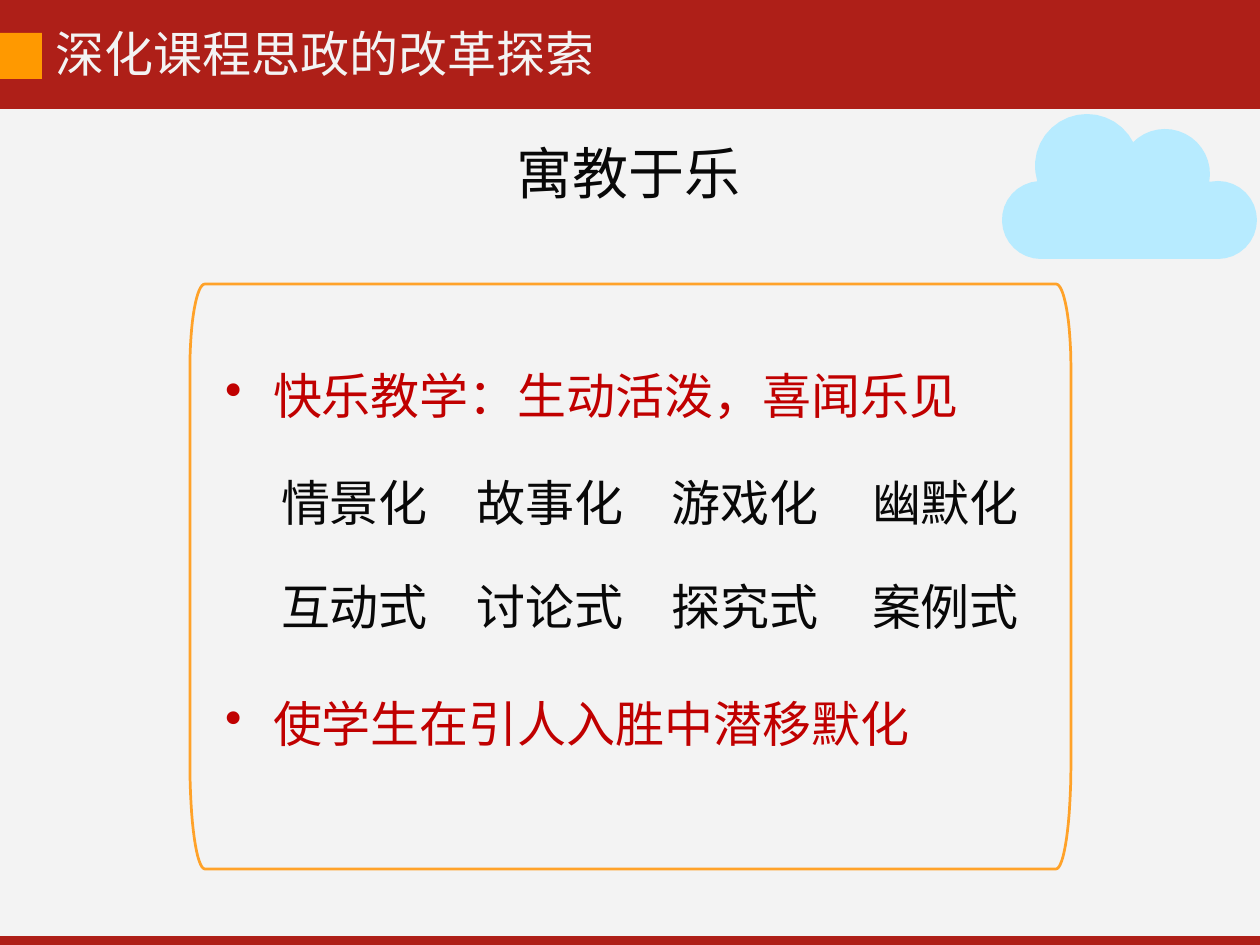
from math import cos, radians, sin

from lxml.etree import SubElement
from pptx import Presentation
from pptx.dml.color import RGBColor
from pptx.enum.shapes import MSO_SHAPE as Shape
from pptx.enum.text import MSO_ANCHOR as Anchor, MSO_AUTO_SIZE as AutoSize, PP_ALIGN as Align
from pptx.oxml.ns import qn
from pptx.util import Pt

FONT = "Noto Sans CJK SC"
RED, ORANGE, FRAME_ORANGE, SKY = "AE1F18", "FF9900", "FFA229", "B7EBFF"
PAPER, INK, ACCENT = "F3F3F3", "080808", "C00000"
NO_GRID_STYLE = "{2D5ABB26-0587-4C30-8999-92F81FD0307C}"


def px(length):
    return round(length * 914400 / 126)


def paint(fill, color):
    fill.solid()
    fill.fore_color.rgb = RGBColor.from_string(color)


def write_text(frame, text, size=28, color=INK, align=Align.LEFT, before=1,
               line=None, indent=0, bullet=None):
    paragraph = frame.paragraphs[0]
    paragraph.alignment = align
    paragraph.space_before = Pt(before)
    if line:
        paragraph.line_spacing = Pt(line)
    properties = paragraph._p.get_or_add_pPr()
    properties.set("marL", str(px(indent)))
    properties.set("indent", str(px(-48 if bullet else 0)))
    if bullet:
        SubElement(properties, qn("a:buChar")).set("char", bullet)
    run = paragraph.add_run()
    run.text = text
    run.font.size = Pt(size)
    run.font.name = FONT
    paint(run.font.fill, color)
    SubElement(run._r.get_or_add_rPr(), qn("a:ea")).set("typeface", FONT)


def fit_frame(frame):
    frame.word_wrap = True
    frame.auto_size = AutoSize.SHAPE_TO_FIT_TEXT
    frame.vertical_anchor = Anchor.TOP
    frame.margin_left = frame.margin_right = frame.margin_bottom = 0
    frame.margin_top = px(1)


def add_text(slide, box, text, **style):
    frame = slide.shapes.add_textbox(*map(px, box)).text_frame
    fit_frame(frame)
    write_text(frame, text, **style)


def set_title(slide, box, text, **style):
    title = slide.shapes.title
    title.left, title.top, title.width, title.height = map(px, box)
    fit_frame(title.text_frame)
    write_text(title.text_frame, text, **style)


def add_block(slide, box, color):
    block = slide.shapes.add_shape(Shape.RECTANGLE, *map(px, box))
    block.shadow.inherit = False
    paint(block.fill, color)
    block.line.fill.background()


def arc(center_x, center_y, radius_x, radius_y, start, end, steps=16):
    """Points along an ellipse, in degrees clockwise from the right."""
    angles = [radians(start + (end - start) * i / steps) for i in range(steps + 1)]
    return [(px(center_x + radius_x * cos(a)), px(center_y + radius_y * sin(a)))
            for a in angles]


def add_outline(slide, points):
    builder = slide.shapes.build_freeform(*points[0])
    builder.add_line_segments(points[1:], close=True)
    outline = builder.convert_to_shape()
    outline.shadow.inherit = False
    return outline


def add_frame(slide, left, top, right, bottom):
    side, upper, lower = 15, 84, 105
    points = (arc(left + side, top + upper, side, upper, 180, 270)
              + arc(right - side, top + upper, side, upper, 270, 360)
              + arc(right - side, bottom - lower, side, lower, 0, 90)
              + arc(left + side, bottom - lower, side, lower, 90, 180))
    frame = add_outline(slide, points)
    frame.fill.background()
    paint(frame.line.fill, FRAME_ORANGE)
    frame.line.width = Pt(1.56)


def add_cloud(slide):
    # Left end, large puff, small puff, right end
    puffs = [(1041, 220, 39, 90, 266), (1087, 166, 52, 163, 334),
             (1165, 174, 45, 224, 370), (1218, 220, 39, 270, 450)]
    points = [point for x, y, radius, start, end in puffs
              for point in arc(x, y, radius, radius, start, end)]
    cloud = add_outline(slide, points)
    paint(cloud.fill, SKY)
    cloud.line.fill.background()


def add_methods(slide, box, rows, widths):
    table = slide.shapes.add_table(len(rows), len(widths), *map(px, box)).table
    table.first_row = table.horz_banding = False
    table._tbl.tblPr.find(qn("a:tableStyleId")).text = NO_GRID_STYLE
    for column, width in zip(table.columns, widths):
        column.width = px(width)
    row_styles = [(0, dict(line=29.6, before=0)), (23, dict(line=30.9, before=13.2))]
    column_styles = [dict(indent=4), dict(indent=24), dict(indent=24),
                     dict(align=Align.RIGHT)]
    for i, (words, (margin_top, row_style)) in enumerate(zip(rows, row_styles)):
        for j, (word, column_style) in enumerate(zip(words, column_styles)):
            cell = table.cell(i, j)
            cell.margin_left = cell.margin_right = cell.margin_bottom = 0
            cell.margin_top = px(margin_top)
            paint(cell.fill, PAPER)
            write_text(cell.text_frame, word, **row_style, **column_style)


def main():
    presentation = Presentation()
    presentation.slide_width, presentation.slide_height = px(1260), px(945)
    slide = presentation.slides.add_slide(presentation.slide_layouts[5])

    # Background and header
    paint(slide.background.fill, PAPER)
    add_block(slide, (0, 0, 1260, 109), RED)
    add_block(slide, (0, 936, 1260, 9), RED)
    add_block(slide, (0, 33, 42, 46), ORANGE)
    add_text(slide, (55, 23, 542, 62), "深化课程思政的改革探索", color=PAPER, indent=1)

    # Points and teaching methods
    point_style = dict(color=ACCENT, indent=49, bullet="•")
    add_text(slide, (224, 365, 740, 62), "快乐教学：生动活泼，喜闻乐见", **point_style)
    add_methods(slide, (277, 484, 742, 158),
                [("情景化", "故事化", "游戏化", "幽默化"),
                 ("互动式", "讨论式", "探究式", "案例式")],
                (176, 195, 195, 176))
    add_text(slide, (224, 693, 687, 62), "使学生在引人入胜中潜移默化", **point_style)

    # Frame, cloud and title
    add_frame(slide, 190, 284, 1071, 869)
    add_cloud(slide)
    set_title(slide, (515, 137, 228, 71), "寓教于乐", size=32, indent=1)

    presentation.save("out.pptx")


if __name__ == "__main__":
    main()
